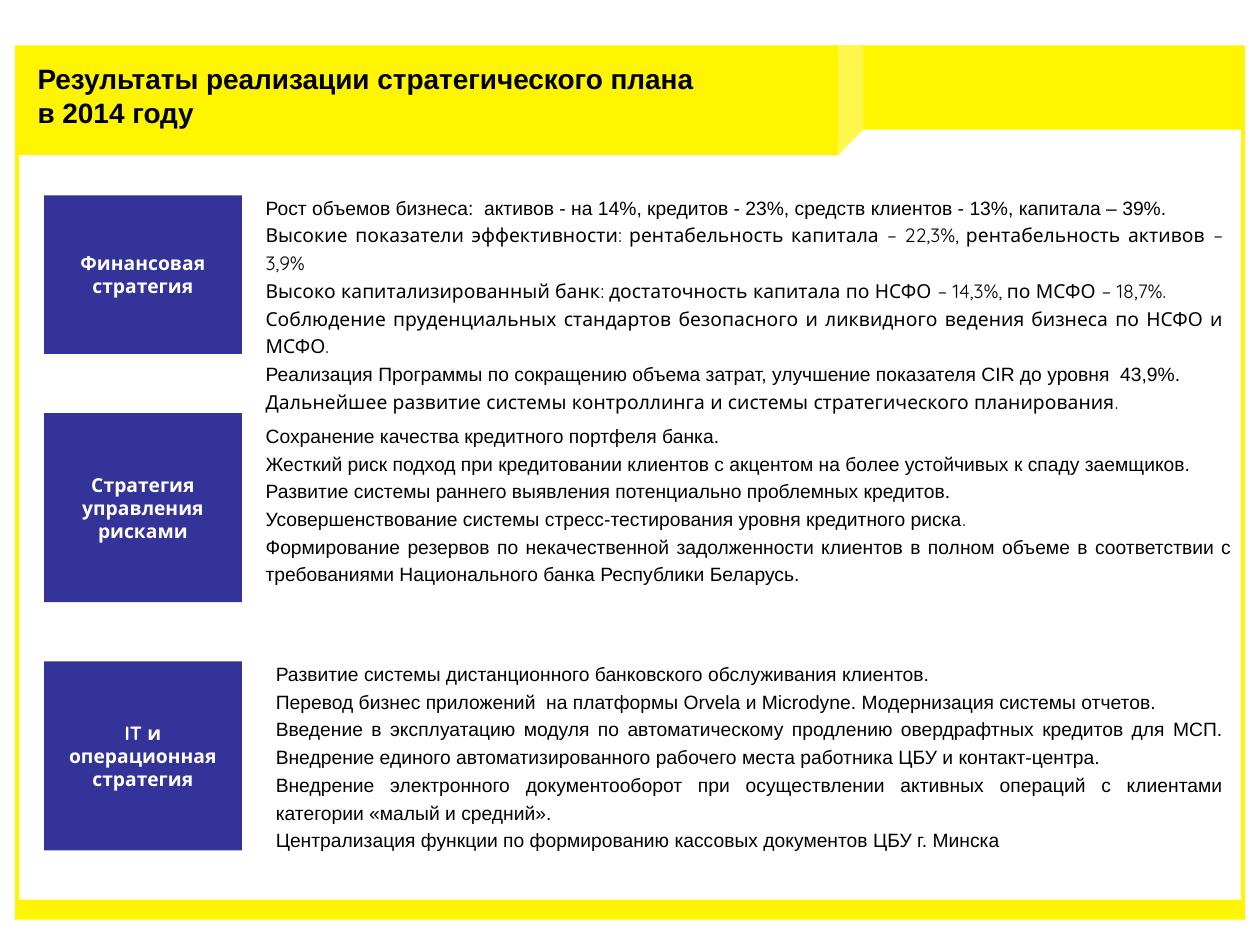
from pptx import Presentation
from pptx import util as u
from pptx.dml.color import RGBColor
from pptx.enum import shapes, text

YELLOW = RGBColor(0xFF, 0xF5, 0x00)
PALE_YELLOW = RGBColor(0xFE, 0xF8, 0x4C)
INDIGO = RGBColor(0x33, 0x33, 0x99)
BLACK = RGBColor(0, 0, 0)
WHITE = RGBColor(0xFF, 0xFF, 0xFF)
ARIAL, QUICKSAND = "Arial", "Quicksand"

deck = Presentation()
deck.slide_width, deck.slide_height = u.Inches(10), u.Inches(7.5)
page = deck.slides.add_slide(deck.slide_layouts[6])

# Grid of 100 columns by 75 rows
COLUMN = deck.slide_width / 100
ROW = deck.slide_height / 75


def add_block(kind, area, colour=None):
    """Add a filled shape, or a text box when kind is None, on grid cells."""
    left, top, width, height = area
    place = [round(n) for n in (left * COLUMN, top * ROW, width * COLUMN, height * ROW)]
    if kind is None:
        box = page.shapes.add_textbox(*place)
    else:
        box = page.shapes.add_shape(kind, *place)
        box.shadow.inherit = False
        box.fill.solid()
        box.fill.fore_color.rgb = colour
        box.line.fill.background()
    box.text_frame.word_wrap = True
    return box


def add_span(para, words, colour, **formats):
    span = para.add_run()
    span.text = words
    span.font.color.rgb = colour
    for name, value in formats.items():
        setattr(span.font, name, value)


# Yellow frame with a folded header
RECTANGLE = shapes.MSO_SHAPE.RECTANGLE
frame = [
    ((1.2, 3.6, 65.4, 8.7), YELLOW),    # header, left part
    ((1.2, 71.4, 97.6, 1.6), YELLOW),   # bottom edge
    ((66.5, 3.6, 32.3, 6.7), YELLOW),   # header, right part
    ((1.2, 4.4, 0.3, 68.5), YELLOW),    # left edge
    ((98.5, 4.4, 0.3, 68.5), YELLOW),   # right edge
    ((66.5, 3.6, 2, 6.7), PALE_YELLOW),  # fold
]
for area, colour in frame:
    add_block(RECTANGLE, area, colour)
fold_tip = add_block(shapes.MSO_SHAPE.RIGHT_TRIANGLE, (66.5, 10.3, 2, 2), PALE_YELLOW)
fold_tip.rotation = 90

# Title
title = add_block(None, (2, 4.4, 68.6, 7.1))
para = title.text_frame.paragraphs[0]
for number, words in enumerate(("Результаты реализации стратегического плана", "в 2014 году")):
    if number:
        para.add_line_break()
    add_span(para, words, BLACK, name=ARIAL, size=u.Pt(16), bold=True)

# Strategies: label, label top and height, text area, paragraphs of (words, font)
strategies = [
    ("Финансовая стратегия", 15.5, 12.6, (20.1, 14.7, 78, 14.3), [
        [("Рост объемов бизнеса:  активов - на 14%, кредитов - 23%, "
          "средств клиентов - 13%, капитала – 39%.", ARIAL)],
        [("Высокие показатели эффективности: рентабельность капитала – 22,3%, "
          "рентабельность активов – 3,9%", QUICKSAND)],
        [("Высоко капитализированный банк: достаточность капитала "
          "по НСФО – 14,3%, по МСФО – 18,7%.", QUICKSAND)],
        [("Соблюдение пруденциальных стандартов безопасного и ликвидного "
          "ведения бизнеса по НСФО и МСФО.", QUICKSAND)],
        [("Реализация Программы по сокращению объема затрат, "
          "улучшение показателя CIR до уровня  43,9%.", ARIAL)],
        [("Дальнейшее развитие системы контроллинга "
          "и системы стратегического планирования.", QUICKSAND)],
    ]),
    ("Стратегия управления рисками", 32.8, 15, (20.1, 32.8, 78.7, 16.5), [
        [("Сохранение качества кредитного портфеля банка.", ARIAL)],
        [("Жесткий риск подход при кредитовании клиентов "
          "с акцентом на более устойчивых к спаду заемщиков.", ARIAL)],
        [("Развитие системы раннего выявления потенциально проблемных кредитов.", ARIAL)],
        [("Усовершенствование системы стресс-тестирования уровня кредитного риска", ARIAL),
         (".", QUICKSAND)],
        [("Формирование резервов по некачественной задолженности клиентов в полном объеме "
          "в соответствии с требованиями Национального банка Республики Беларусь.", ARIAL)],
    ]),
    ("IT и операционная стратегия", 52.5, 15, (20.9, 51.7, 77.2, 18.4), [
        [("Развитие системы дистанционного банковского обслуживания клиентов.", ARIAL)],
        [("Перевод бизнес приложений  на платформы Orvela и Microdyne. "
          "Модернизация системы отчетов.", ARIAL)],
        [("Введение в эксплуатацию модуля по автоматическому продлению овердрафтных "
          "кредитов для МСП. Внедрение единого автоматизированного рабочего места "
          "работника ЦБУ и контакт-центра.", ARIAL)],
        [("Внедрение электронного документооборот при осуществлении активных операций "
          "с клиентами категории «малый и средний».", ARIAL)],
        [("Централизация функции по формированию кассовых документов ЦБУ г. Минска", ARIAL)],
    ]),
]
label_frame = {
    "vertical_anchor": text.MSO_ANCHOR.MIDDLE,
    "margin_left": u.Inches(0.09),
    "margin_right": u.Inches(0.09),
}
body_paragraph = {"alignment": text.PP_ALIGN.JUSTIFY, "line_spacing": 1.2}

for label, top, height, area, paragraphs in strategies:
    # Label on the left
    box = add_block(RECTANGLE, (3.5, top, 15.7, height), INDIGO)
    for name, value in label_frame.items():
        setattr(box.text_frame, name, value)
    para = box.text_frame.paragraphs[0]
    para.alignment = text.PP_ALIGN.CENTER
    add_span(para, label, WHITE, name=QUICKSAND, size=u.Pt(11), bold=True)

    # Results on the right
    body = add_block(None, area).text_frame
    body.auto_size = text.MSO_AUTO_SIZE.SHAPE_TO_FIT_TEXT
    for number, spans in enumerate(paragraphs):
        para = body.add_paragraph() if number else body.paragraphs[0]
        for name, value in body_paragraph.items():
            setattr(para, name, value)
        for words, font in spans:
            add_span(para, words, BLACK, name=font, size=u.Pt(11))

deck.save("out.pptx")
